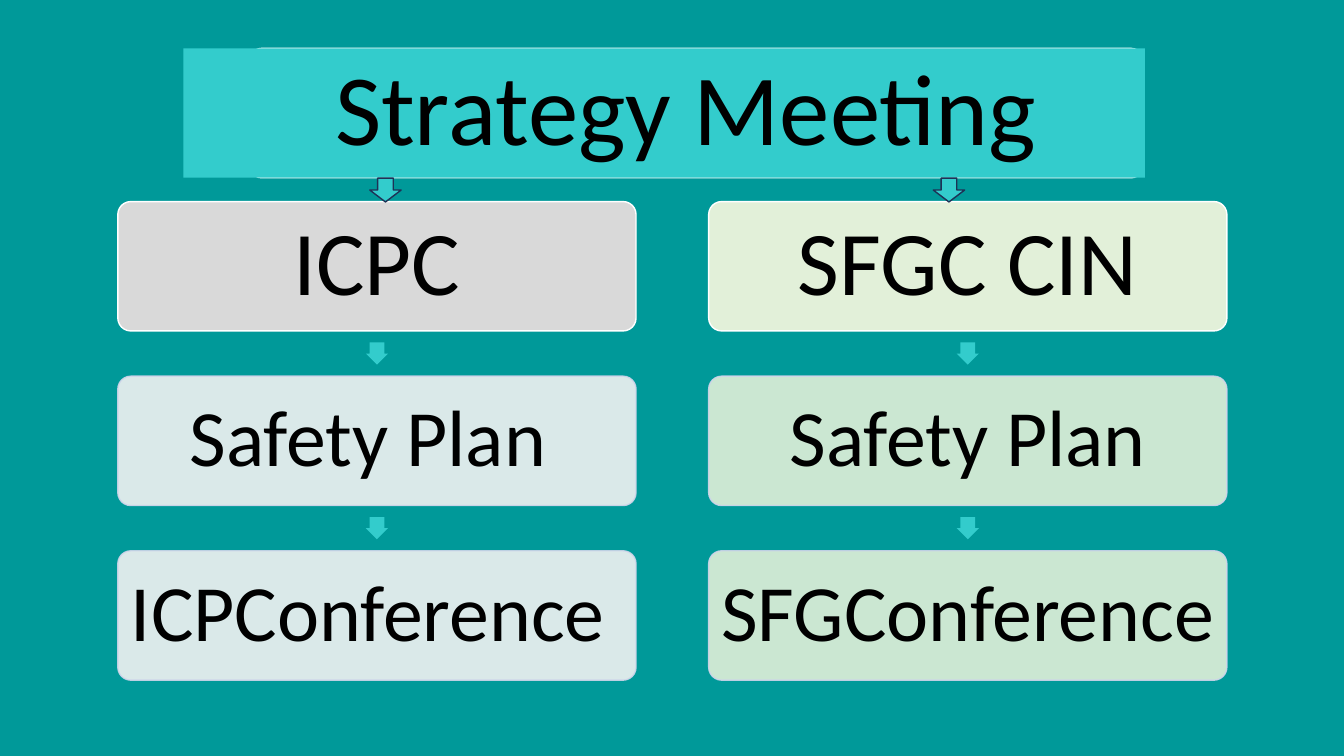
from pptx import Presentation
from pptx.dml.color import RGBColor
from pptx.enum.shapes import MSO_SHAPE
from pptx.enum.text import MSO_ANCHOR, PP_ALIGN
from pptx.oxml.ns import qn
from pptx.util import Cm, Pt
from lxml.etree import SubElement

TEAL = "33CCCC"
HIGH = 3.26
GAP = 1.14


def paint(form, tint):
    form.solid()
    form.fore_color.rgb = RGBColor.from_string(tint)


def fade(shape):
    for tint in shape.element.spPr.iter(qn("a:srgbClr")):
        SubElement(tint, qn("a:alpha"), val="90000")


def draw(slide, kind, box, fill, line=None):
    shape = slide.shapes.add_shape(kind, *map(Cm, box))
    shape.shadow.inherit = False
    paint(shape.fill, fill)
    if line:
        paint(shape.line.fill, line)
        shape.line.width = Pt(1)
    else:
        shape.line.fill.background()
    return shape


def write(shape, text, size, left=0.15, right=0.15):
    frame = shape.text_frame
    frame.text = text
    frame.word_wrap = True
    frame.vertical_anchor = MSO_ANCHOR.MIDDLE
    frame.margin_left, frame.margin_right = Cm(left), Cm(right)
    frame.margin_top = frame.margin_bottom = Cm(0.2)
    para = frame.paragraphs[0]
    para.alignment = PP_ALIGN.CENTER
    para.line_spacing = 0.9
    para.font.size = Pt(size)
    para.font.name = "Calibri"
    para.font.color.rgb = RGBColor.from_string("000000")


def card(slide, box, fill, line):
    shape = draw(slide, MSO_SHAPE.ROUNDED_RECTANGLE, box, fill, line)
    shape.adjustments[0] = 0.1
    return shape


def header(slide, box, text):
    x, y, wide, high = box
    back = card(slide, (x + 1.65, y, wide - 1.67, high), TEAL, "FFFFFF")
    title = slide.shapes.title
    title.element.addprevious(back.element)
    title.left, title.top, title.width, title.height = map(Cm, box)
    paint(title.fill, TEAL)
    write(title, text, 72, 1.35, 0.25)


def column(slide, box, texts, head, body):
    x, y, wide, high = box
    for i, text in enumerate(texts):
        top = y + i * (high + GAP)
        fill, line, size = (body, "CFD5EA", 57) if i else (head, "FFFFFF", 65)
        shape = card(slide, (x, top, wide, high), fill, line)
        write(shape, text, size)
        if i:
            fade(shape)
            side = 0.56
            spot = (x + (wide - side) / 2, top - (GAP + side) / 2, side, side)
            arrow = draw(slide, MSO_SHAPE.DOWN_ARROW, spot, TEAL)
            arrow.adjustments[0] = 0.667


def main():
    deck = Presentation()
    deck.slide_width, deck.slide_height = Cm(33.87), Cm(19.05)
    slide = deck.slides.add_slide(deck.slide_layouts[5])
    paint(slide.background.fill, "009999")
    column(slide, (2.97, 5.08, 13.06, HIGH),
           ("ICPC", "Safety Plan ", "ICPConference "), "D9D9D9", "F2F2F2")
    column(slide, (17.86, 5.08, 13.06, HIGH),
           ("SFGC CIN", "Safety Plan", "SFGConference"), "E2F0D9", "E2F0D9")
    header(slide, (4.62, 1.22, 24.23, HIGH), "Strategy Meeting")
    for x in (9.32, 23.52):
        draw(slide, MSO_SHAPE.DOWN_ARROW, (x, 4.49, 0.79, 0.6), TEAL, "1E3256")
    deck.save("out.pptx")


if __name__ == "__main__":
    main()
